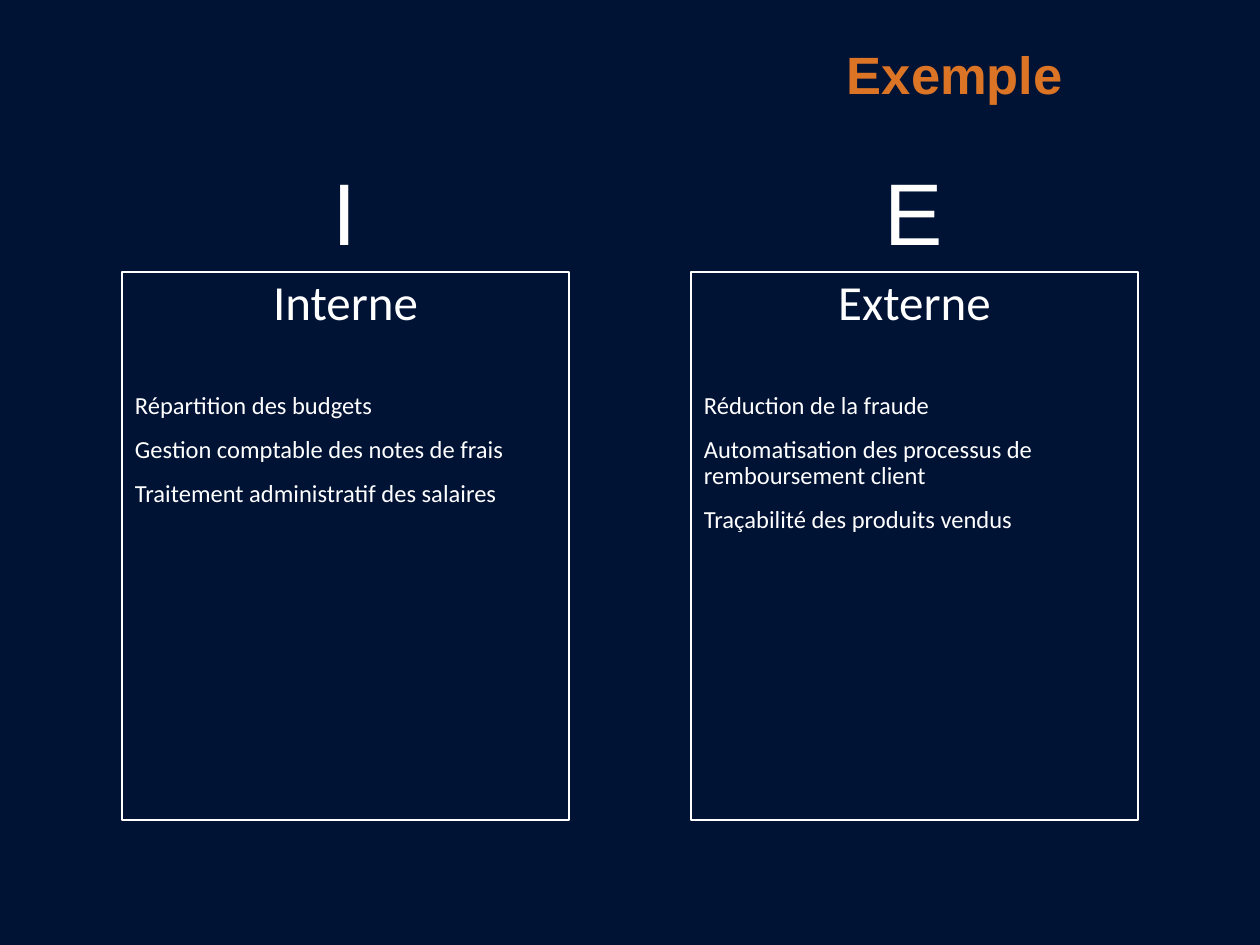
from pptx import Presentation
from pptx.dml.color import RGBColor
from pptx.enum.shapes import MSO_SHAPE as Shape
from pptx.enum.text import MSO_ANCHOR as Anchor, PP_ALIGN as Align
from pptx.util import Emu, Pt

PX = 914400 // 126
NAVY = RGBColor(0x01, 0x13, 0x35)
WHITE = RGBColor(0xFF, 0xFF, 0xFF)
ORANGE = RGBColor(0xDB, 0x74, 0x25)

PANEL_TOP, PANEL_WIDTH, PANEL_HEIGHT = 272, 447, 548
LETTER_TOP, LETTER_WIDTH, LETTER_HEIGHT = 149, 146, 122

COLUMNS = [
    (122, "I", "Interne", [
        "Répartition des budgets",
        "Gestion comptable des notes de frais",
        "Traitement administratif des salaires",
    ]),
    (691, "E", "Externe", [
        "Réduction de la fraude",
        "Automatisation des processus de remboursement client",
        "Traçabilité des produits vendus",
    ]),
]


def px(*lengths):
    return [Emu(length * PX) for length in lengths]


def set_margins(frame, horizontal, vertical):
    frame.margin_left, frame.margin_right = px(horizontal, horizontal)
    frame.margin_top, frame.margin_bottom = px(vertical, vertical)
    frame.word_wrap = True


def style(paragraph, text, size, font_name, color=WHITE, align=Align.LEFT, bold=False):
    paragraph.text = text
    paragraph.alignment = align
    font = paragraph.font
    font.name, font.size, font.bold = font_name, Pt(size), bold
    font.color.rgb = color


def add_label(slide, box, text, size, anchor=Anchor.TOP, **options):
    frame = slide.shapes.add_textbox(*px(*box)).text_frame
    set_margins(frame, 13, 13)
    frame.vertical_anchor = anchor
    style(frame.paragraphs[0], text, size, "Arial", **options)


def add_panel(slide, left, heading, items):
    """Outlined box with a centred heading and a list set apart below it."""
    box = px(left, PANEL_TOP, PANEL_WIDTH, PANEL_HEIGHT)
    shape = slide.shapes.add_shape(Shape.RECTANGLE, *box)
    shape.shadow.inherit = False
    shape.fill.background()
    shape.line.color.rgb = WHITE
    shape.line.width = Pt(0.75)

    frame = shape.text_frame
    set_margins(frame, 13, 6)
    frame.vertical_anchor = Anchor.TOP
    style(frame.paragraphs[0], heading, 28, "Calibri", align=Align.CENTER)
    for index, item in enumerate(items):
        paragraph = frame.add_paragraph()
        style(paragraph, item, 14, "Calibri")
        paragraph.space_before = Pt(10 if index else 35.4)
    for paragraph in frame.paragraphs:
        paragraph.line_spacing = 0.9


def main():
    presentation = Presentation()
    presentation.slide_width, presentation.slide_height = px(1260, 945)
    slide = presentation.slides.add_slide(presentation.slide_layouts[6])
    slide.background.fill.solid()
    slide.background.fill.fore_color.rgb = NAVY

    add_label(slide, (834, 29, 247, 89), "Exemple", 30, color=ORANGE, bold=True)
    for left, letter, heading, items in COLUMNS:
        add_panel(slide, left, heading, items)
        letter_left = left + (PANEL_WIDTH - LETTER_WIDTH) // 2
        letter_box = (letter_left, LETTER_TOP, LETTER_WIDTH, LETTER_HEIGHT)
        add_label(slide, letter_box, letter, 50, Anchor.MIDDLE, align=Align.CENTER)

    presentation.save("out.pptx")


if __name__ == "__main__":
    main()
